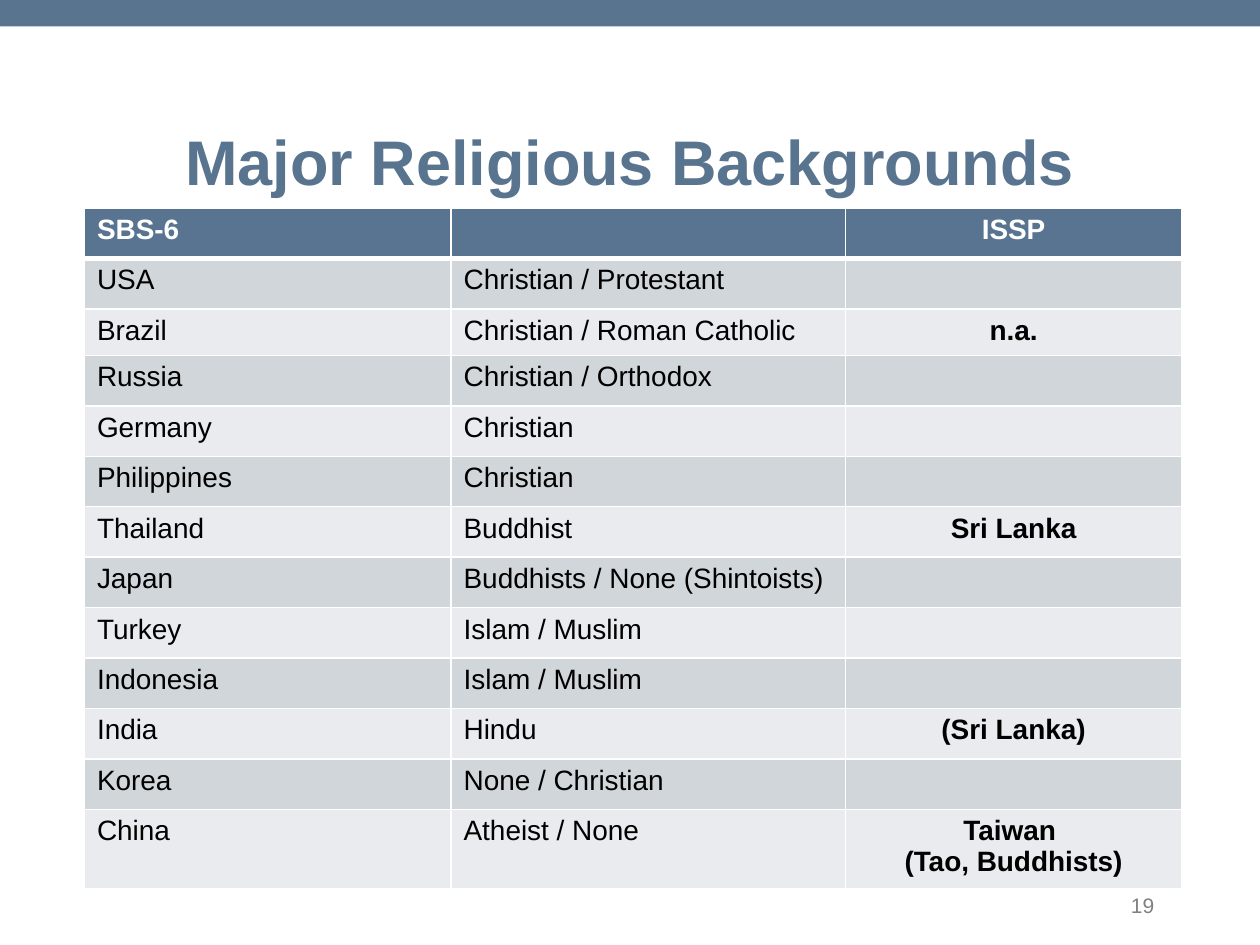
from lxml import etree
from pptx import Presentation
from pptx.dml.color import RGBColor
from pptx.enum.shapes import MSO_SHAPE
from pptx.enum.text import MSO_ANCHOR, PP_ALIGN
from pptx.oxml.ns import qn
from pptx.util import Inches, Pt

RECTANGLE = MSO_SHAPE.RECTANGLE
MIDDLE = MSO_ANCHOR.MIDDLE
LEFT, CENTER, RIGHT = PP_ALIGN.LEFT, PP_ALIGN.CENTER, PP_ALIGN.RIGHT
TITLE_ONLY = 5
BLUE, HEADER_BLUE, GRAY = "58748F", "597490", "808080"
WHITE, BLACK = "FFFFFF", "000000"
BANDS = ["EAEBEE", "D1D6DB"]

BACKGROUNDS = [
    ("SBS-6", "", "ISSP"),
    ("USA", "Christian / Protestant", ""),
    ("Brazil", "Christian / Roman Catholic", "n.a."),
    ("Russia", "Christian / Orthodox", ""),
    ("Germany", "Christian", ""),
    ("Philippines", "Christian", ""),
    ("Thailand", "Buddhist", "Sri Lanka"),
    ("Japan", "Buddhists / None (Shintoists)", ""),
    ("Turkey", "Islam / Muslim", ""),
    ("Indonesia", "Islam / Muslim", ""),
    ("India", "Hindu", "(Sri Lanka)"),
    ("Korea", "None / Christian", ""),
    ("China", "Atheist / None", "Taiwan \v(Tao, Buddhists)"),
]
COLUMN_WIDTHS = [2.91, 3.13, 2.67]
ROW_HEIGHT = 0.4
SPECIAL_HEIGHTS = {0: 0.38, 1: 0.38, 2: 0.37, 7: 0.38, 12: 0.59}


def write(frame, text, size, color, bold=False, align=LEFT):
    frame.text = text
    paragraph = frame.paragraphs[0]
    paragraph.alignment = align
    for run in paragraph.runs:
        values = {"name": "Arial", "size": Pt(size), "bold": bold}
        for attribute, value in values.items():
            setattr(run.font, attribute, value)
        run.font.color.rgb = RGBColor.from_string(color)


def add_borders(cell, widths):
    """Draw white borders; widths maps the sides L, R, T, B to points."""
    properties = cell._tc.get_or_add_tcPr()
    for side, width in widths.items():
        line = etree.SubElement(properties, qn(f"a:ln{side}"), w=str(Pt(width)))
        fill = etree.SubElement(line, qn("a:solidFill"))
        etree.SubElement(fill, qn("a:srgbClr"), val=WHITE)


prs = Presentation()
prs.slide_width, prs.slide_height = Inches(10), Inches(7.5)
slide = prs.slides.add_slide(prs.slide_layouts[TITLE_ONLY])

top_band = slide.shapes.add_shape(RECTANGLE, 0, 0, prs.slide_width, Inches(0.21))
top_band.shadow.inherit = False
top_band.fill.solid()
top_band.fill.fore_color.rgb = RGBColor.from_string(BLUE)
top_band.line.fill.background()

title = slide.shapes.title
title.left, title.top = Inches(0.75), Inches(0.99)
title.width, title.height = Inches(8.5), Inches(0.56)
title.text_frame.vertical_anchor = MIDDLE
write(title.text_frame, "Major Religious Backgrounds", 36, BLUE, True, CENTER)

page_number = slide.shapes.add_textbox(
    Inches(7.13), Inches(6.98), Inches(2.13), Inches(0.4)).text_frame
page_number.word_wrap = True
page_number.vertical_anchor = MIDDLE
write(page_number, "19", 12, GRAY, align=RIGHT)

heights = [SPECIAL_HEIGHTS.get(row, ROW_HEIGHT) for row in range(len(BACKGROUNDS))]
religions = slide.shapes.add_table(
    len(BACKGROUNDS), len(COLUMN_WIDTHS), Inches(0.67), Inches(1.65),
    Inches(sum(COLUMN_WIDTHS)), Inches(sum(heights))).table
for column, width in zip(religions.columns, COLUMN_WIDTHS):
    column.width = Inches(width)

for r, entries in enumerate(BACKGROUNDS):
    religions.rows[r].height = Inches(heights[r])
    is_header = r == 0
    for c, entry in enumerate(entries):
        cell = religions.cell(r, c)
        is_survey = c == 2
        add_borders(cell, {"L": 1, "R": 1, "T": 3 if r == 1 else 1,
                           "B": 3 if is_header else 1})
        cell.fill.solid()
        cell.fill.fore_color.rgb = RGBColor.from_string(
            HEADER_BLUE if is_header else BANDS[r % 2])
        write(cell.text_frame, entry, 16, WHITE if is_header else BLACK,
              is_header or is_survey, CENTER if is_survey else LEFT)

prs.save("out.pptx")
